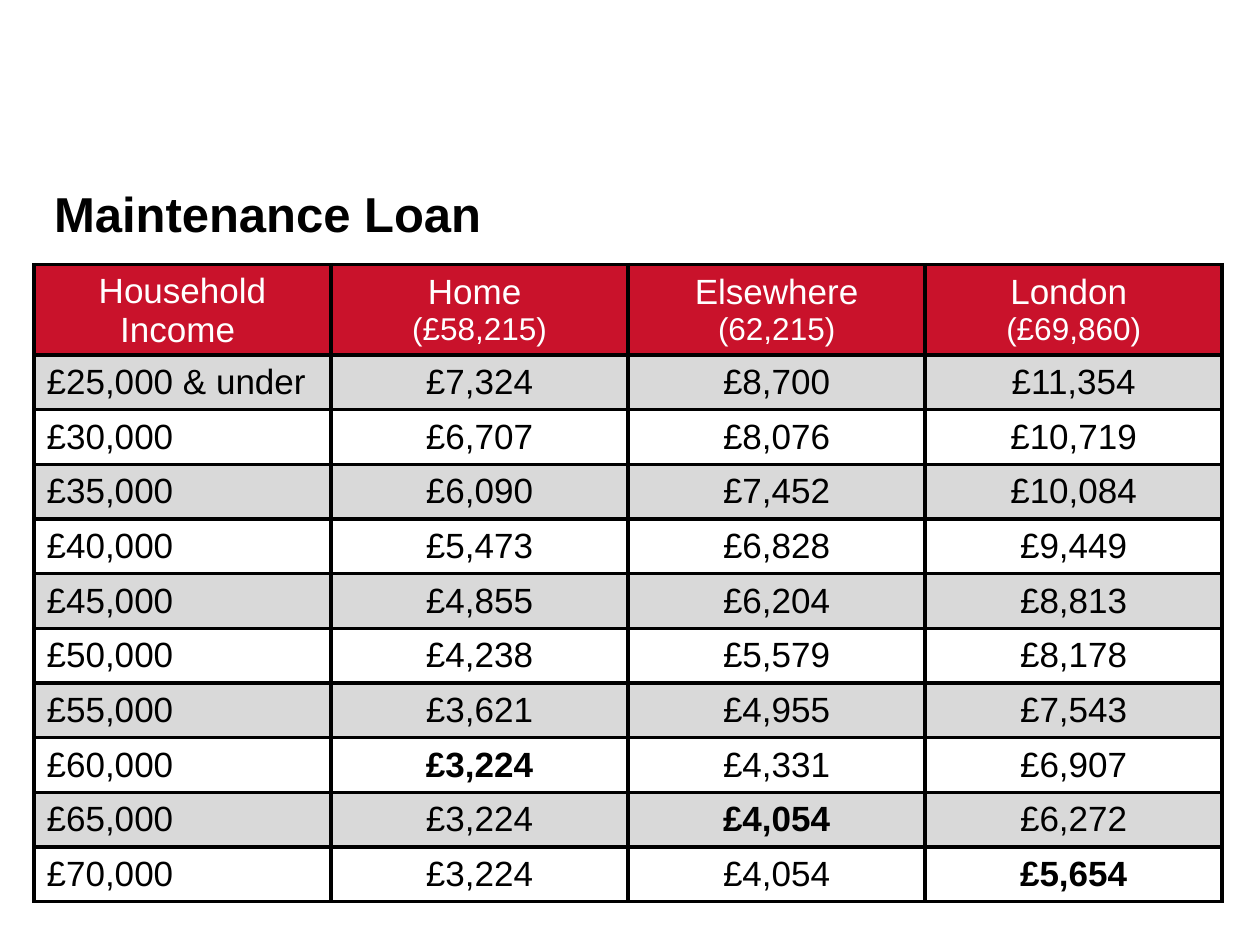
from lxml import etree
from pptx import Presentation
from pptx.dml.color import RGBColor
from pptx.enum.text import MSO_ANCHOR, PP_ALIGN
from pptx.oxml.ns import qn
from pptx.util import Inches, Pt

LEFT, CENTER = PP_ALIGN.LEFT, PP_ALIGN.CENTER
TOP, MIDDLE = MSO_ANCHOR.TOP, MSO_ANCHOR.MIDDLE

# Content
TITLE = "Maintenance Loan"
# Each heading is a list of paragraphs, each paragraph a list of (text, size name)
HEADINGS = [
    [[("Household Income ", "body")]],
    [[("Home ", "body")], [("(£58,215)", "note")]],
    [[("Elsewhere ", "body"), ("(62,215)", "note")]],
    [[("London ", "body")], [("(£69,860)", "note")]],
]
LOANS = [
    ("£25,000 & under", "£7,324", "£8,700", "£11,354"),
    ("£30,000", "£6,707", "£8,076", "£10,719"),
    ("£35,000", "£6,090", "£7,452", "£10,084"),
    ("£40,000", "£5,473", "£6,828", "£9,449"),
    ("£45,000", "£4,855", "£6,204", "£8,813"),
    ("£50,000", "£4,238", "£5,579", "£8,178"),
    ("£55,000", "£3,621", "£4,955", "£7,543"),
    ("£60,000", "£3,224", "£4,331", "£6,907"),
    ("£65,000", "£3,224", "£4,054", "£6,272"),
    ("£70,000", "£3,224", "£4,054", "£5,654"),
]
# First income (column, amount) at which each minimum loan is reached
MINIMUMS = {("£60,000", 1), ("£65,000", 2), ("£70,000", 3)}

THEME = {
    "font": "Arial",
    "sizes": {"title": 28, "body": 20, "note": 18},
    "black": "000000",
    "white": "FFFFFF",
    "header": "C9122B",
    "bands": ("D9D9D9", "FFFFFF"),
    "border": 2.25,
}

# Layout in inches
SLIDE_WIDTH, SLIDE_HEIGHT = 10, 7.5
TITLE_BOX = (0.43, 1.46, 9.21, 0.94)
TABLE_LEFT, TABLE_TOP, TABLE_WIDTH = 0.27, 2.1, 9.43
HEADER_HEIGHT, BODY_HEIGHT = 0.71, 4.33
HEADER_MARGINS = {"margin_top": Inches(0.03), "margin_bottom": Inches(0.02)}


def add_span(para, text, size, color, bold=False):
    span = para.add_run()
    span.text = text
    formats = {"name": THEME["font"], "size": Pt(THEME["sizes"][size]), "bold": bold}
    for name, value in formats.items():
        setattr(span.font, name, value)
    span.font.color.rgb = RGBColor.from_string(color)


def add_borders(cell):
    properties = cell._tc.get_or_add_tcPr()
    for index, side in enumerate(("lnL", "lnR", "lnT", "lnB")):
        line = etree.Element(qn(f"a:{side}"), w=str(Pt(THEME["border"])))
        fill = etree.SubElement(line, qn("a:solidFill"))
        etree.SubElement(fill, qn("a:srgbClr"), val=THEME["black"])
        properties.insert(index, line)


def fill_cell(cell, paragraphs, background, color, align, bold=False):
    cell.fill.solid()
    cell.fill.fore_color.rgb = RGBColor.from_string(background)
    cell.vertical_anchor = MIDDLE
    add_borders(cell)
    for index, spans in enumerate(paragraphs):
        frame = cell.text_frame
        para = frame.add_paragraph() if index else frame.paragraphs[0]
        para.alignment = align
        for text, size in spans:
            add_span(para, text, size, color, bold)


def add_title(page):
    box = page.shapes.add_textbox(*map(Inches, TITLE_BOX))
    frame = box.text_frame
    formats = {"word_wrap": True, "vertical_anchor": TOP, "margin_left": 0,
               "margin_right": 0, "margin_top": 0, "margin_bottom": 0}
    for name, value in formats.items():
        setattr(frame, name, value)
    add_span(frame.paragraphs[0], TITLE, "title", THEME["black"], True)


def add_loan_table(page):
    table = page.shapes.add_table(
        len(LOANS) + 1, len(HEADINGS), Inches(TABLE_LEFT), Inches(TABLE_TOP),
        Inches(TABLE_WIDTH), Inches(HEADER_HEIGHT + BODY_HEIGHT)).table
    for column in table.columns:
        column.width = Inches(TABLE_WIDTH / len(HEADINGS))
    for index, row in enumerate(table.rows):
        row.height = Inches(BODY_HEIGHT / len(LOANS) if index else HEADER_HEIGHT)

    # Header row
    for column, heading in enumerate(HEADINGS):
        cell = table.cell(0, column)
        fill_cell(cell, heading, THEME["header"], THEME["white"], CENTER)
        for name, value in HEADER_MARGINS.items():
            setattr(cell, name, value)

    # Banded rows, one per income
    for index, loan in enumerate(LOANS):
        for column, amount in enumerate(loan):
            fill_cell(table.cell(index + 1, column), [[(amount, "body")]],
                      THEME["bands"][index % 2], THEME["black"],
                      CENTER if column else LEFT, (loan[0], column) in MINIMUMS)


def main():
    deck = Presentation()
    deck.slide_width, deck.slide_height = Inches(SLIDE_WIDTH), Inches(SLIDE_HEIGHT)
    page = deck.slides.add_slide(deck.slide_layouts[6])
    add_title(page)
    add_loan_table(page)
    deck.save("out.pptx")


if __name__ == "__main__":
    main()
